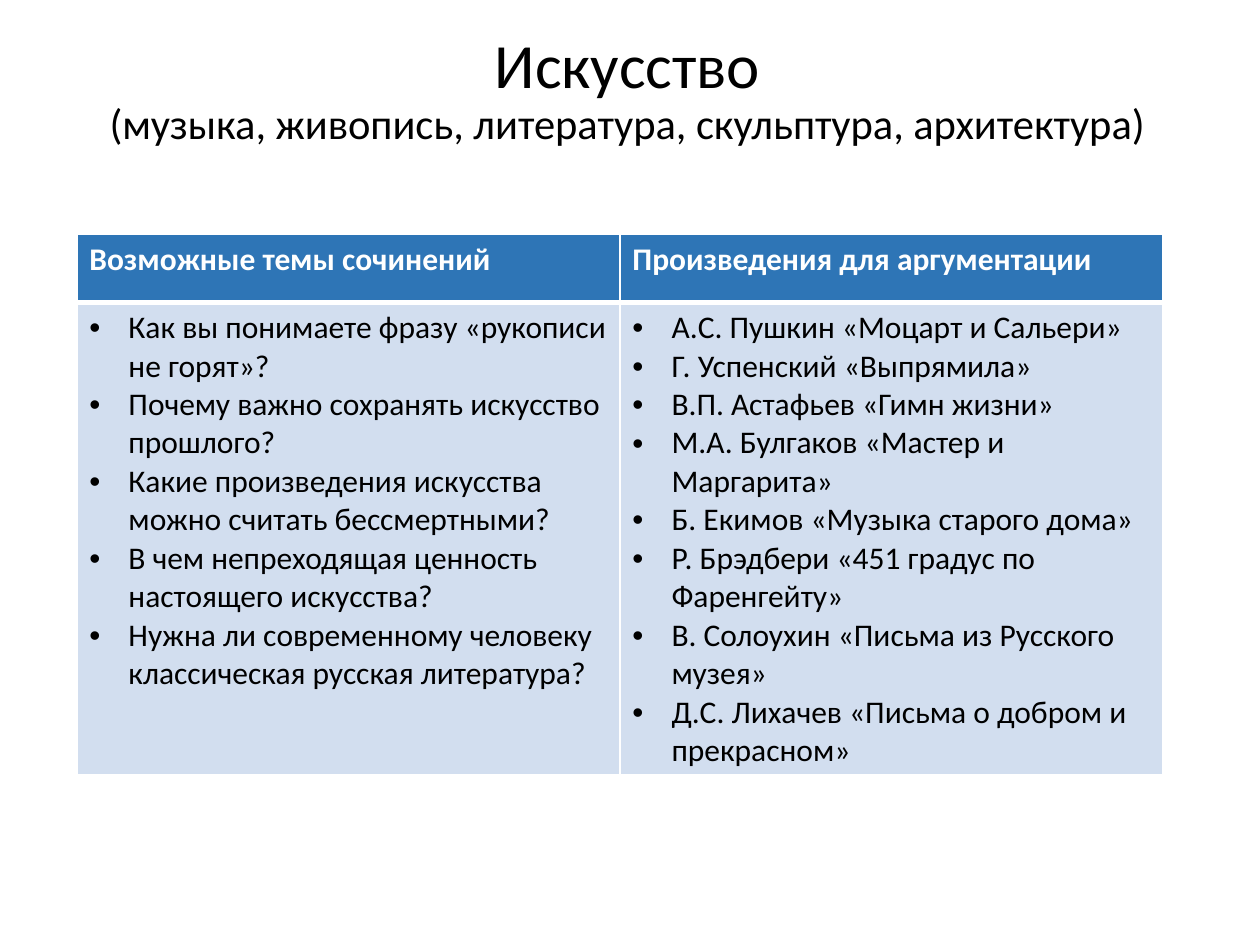
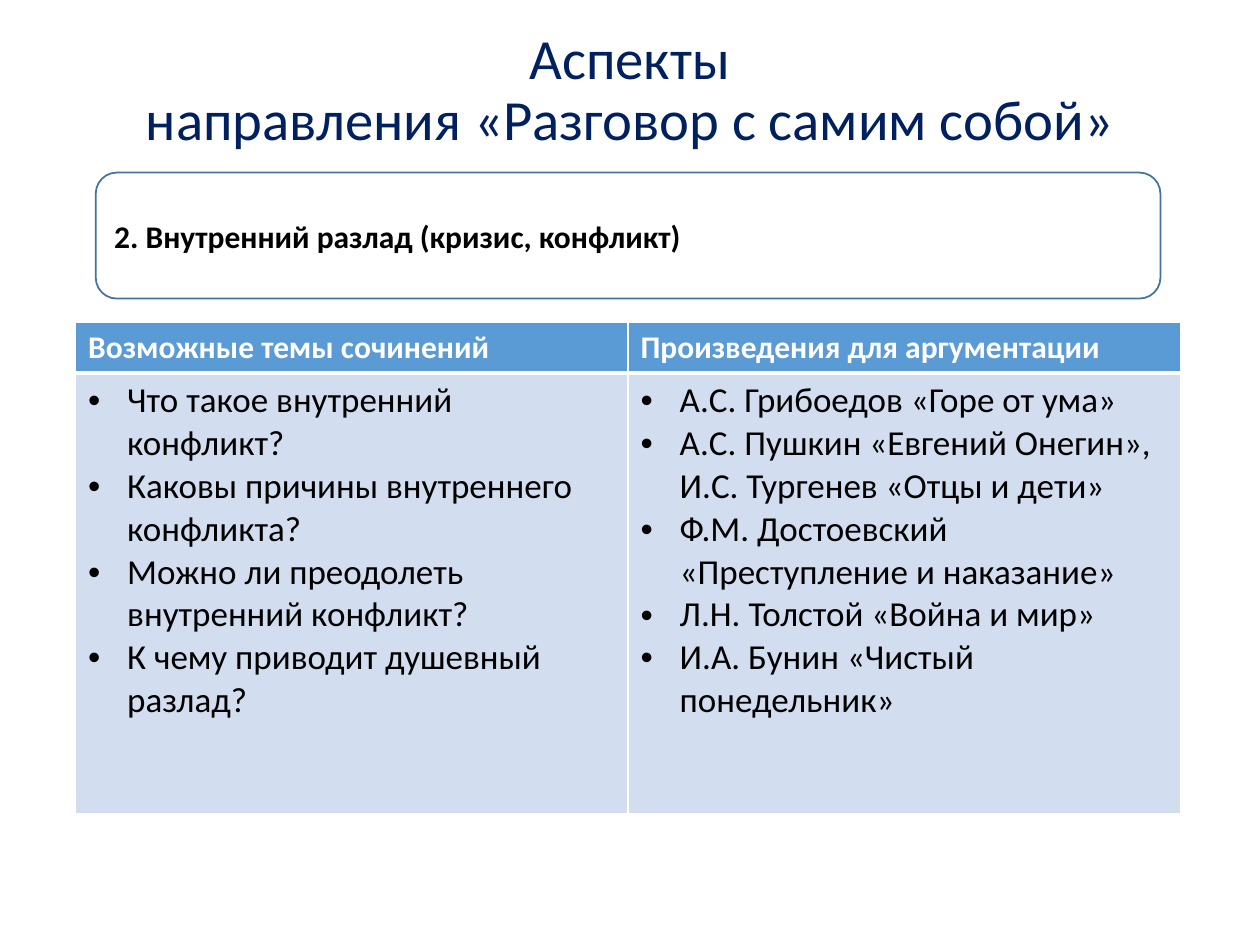
from dataclasses import dataclass

import lxml.etree
import pptx
import pptx.dml.color
import pptx.enum.shapes
import pptx.enum.text
import pptx.oxml.ns
import pptx.slide
import pptx.table
import pptx.text.text
import pptx.util

SLIDE_WIDTH = pptx.util.Inches(10)
SLIDE_HEIGHT = pptx.util.Inches(7.5)
GRID_COLUMNS = 100
GRID_ROWS = 75


@dataclass(frozen=True)
class Theme:
    """Colours and type sizes of the presentation."""

    font: str = "Calibri"
    text: str = "000000"
    light: str = "FFFFFF"
    navy: str = "002060"
    header_dark: str = "2E75B6"
    header_light: str = "5B9BD5"
    body: str = "D2DEEF"
    outline: str = "43739E"
    title_large: float = 36
    title_medium: float = 32.4
    title_small: float = 24.3
    label: float = 18
    large_label: float = 20
    thin_line: float = 1
    thick_line: float = 3
    title_spacing: float = 0.9


THEME = Theme()
HEADINGS = ("Возможные темы сочинений", "Произведения для аргументации")


@dataclass(frozen=True)
class Area:
    """A rectangle in grid columns and rows."""

    column: float
    row: float
    columns: float
    rows: float

    def emu(self) -> tuple[int, int, int, int]:
        """Return left, top, width and height."""
        return across(self.column), down(self.row), across(self.columns), down(self.rows)


@dataclass(frozen=True)
class TitleLine:
    """One line of a slide title."""

    text: str
    size: float


@dataclass(frozen=True)
class Title:
    """A centred slide title."""

    area: Area
    lines: tuple[TitleLine, ...]
    color: str


@dataclass(frozen=True)
class ThemeTable:
    """Essay topics beside the works that support them."""

    area: Area
    header_rows: float
    header_color: str
    size: float
    topics: tuple[str, ...]
    works: tuple[str, ...]


@dataclass(frozen=True)
class Aspect:
    """A rounded box that names the aspect."""

    area: Area
    text: str


@dataclass(frozen=True)
class Page:
    """Everything that one slide shows."""

    title: Title
    table: ThemeTable
    aspect: Aspect | None = None


def across(columns: float) -> int:
    """Convert grid columns to a length."""
    return round(SLIDE_WIDTH * columns / GRID_COLUMNS)


def down(rows: float) -> int:
    """Convert grid rows to a length."""
    return round(SLIDE_HEIGHT * rows / GRID_ROWS)


def rgb(color: str) -> pptx.dml.color.RGBColor:
    """Return a colour from its hexadecimal form."""
    return pptx.dml.color.RGBColor.from_string(color)


def style_font(font: pptx.text.text.Font, size: float, color: str, bold: bool = False) -> None:
    """Set the typeface, size, colour and weight."""
    font.name = THEME.font
    font.size = pptx.util.Pt(size)
    font.color.rgb = rgb(color)
    font.bold = bold


def draw_title(slide: pptx.slide.Slide, title: Title) -> None:
    """Draw the title lines in one centred paragraph."""
    frame = slide.shapes.add_textbox(*title.area.emu()).text_frame
    frame.word_wrap = True
    frame.vertical_anchor = pptx.enum.text.MSO_ANCHOR.MIDDLE
    paragraph = frame.paragraphs[0]
    paragraph.alignment = pptx.enum.text.PP_ALIGN.CENTER
    paragraph.line_spacing = THEME.title_spacing
    for index, line in enumerate(title.lines):
        if index:
            paragraph.add_line_break()
        run = paragraph.add_run()
        run.text = line.text
        style_font(run.font, line.size, title.color)


def add_bullet(paragraph: pptx.text.text._Paragraph) -> None:
    """Give a paragraph a bullet and a hanging indent."""
    indent = across(3.1)
    properties = paragraph._p.get_or_add_pPr()
    properties.set("marL", str(indent))
    properties.set("indent", str(-indent))
    lxml.etree.SubElement(properties, pptx.oxml.ns.qn("a:buFont"), typeface="Arial")
    lxml.etree.SubElement(properties, pptx.oxml.ns.qn("a:buChar"), char="•")


def style_cell(cell: pptx.table._Cell, color: str, is_header: bool) -> None:
    """Set white borders, with a thick rule below the header, and the fill."""
    properties = cell._tc.get_or_add_tcPr()
    thick_side = "lnB" if is_header else "lnT"
    for side in ("lnL", "lnR", "lnT", "lnB"):
        width = THEME.thick_line if side == thick_side else THEME.thin_line
        border = lxml.etree.SubElement(
            properties, pptx.oxml.ns.qn(f"a:{side}"), w=str(pptx.util.Pt(width))
        )
        fill = lxml.etree.SubElement(border, pptx.oxml.ns.qn("a:solidFill"))
        lxml.etree.SubElement(fill, pptx.oxml.ns.qn("a:srgbClr"), val=THEME.light)
    cell.fill.solid()
    cell.fill.fore_color.rgb = rgb(color)


def draw_table(slide: pptx.slide.Slide, content: ThemeTable) -> None:
    """Draw the headings over two bulleted columns."""
    table = slide.shapes.add_table(2, len(HEADINGS), *content.area.emu()).table
    table.first_row = False
    table.horz_banding = False
    table.rows[0].height = down(content.header_rows)
    table.rows[1].height = down(content.area.rows - content.header_rows)
    for index, (heading, items) in enumerate(zip(HEADINGS, (content.topics, content.works))):
        table.columns[index].width = across(content.area.columns / len(HEADINGS))
        header, body = table.cell(0, index), table.cell(1, index)
        style_cell(header, content.header_color, True)
        style_cell(body, THEME.body, False)
        header.text_frame.text = heading
        style_font(header.text_frame.paragraphs[0].font, THEME.label, THEME.light, True)
        body.text_frame.text = "\n".join(items)
        for paragraph in body.text_frame.paragraphs:
            add_bullet(paragraph)
            style_font(paragraph.font, content.size, THEME.text)


def draw_aspect(slide: pptx.slide.Slide, aspect: Aspect) -> None:
    """Draw the outlined box with the aspect name."""
    shape = slide.shapes.add_shape(
        pptx.enum.shapes.MSO_SHAPE.ROUNDED_RECTANGLE, *aspect.area.emu()
    )
    shape.shadow.inherit = False
    shape.fill.solid()
    shape.fill.fore_color.rgb = rgb(THEME.light)
    shape.line.color.rgb = rgb(THEME.outline)
    shape.line.width = pptx.util.Pt(THEME.thin_line)
    frame = shape.text_frame
    frame.word_wrap = True
    frame.vertical_anchor = pptx.enum.text.MSO_ANCHOR.MIDDLE
    paragraph = frame.paragraphs[0]
    paragraph.text = aspect.text
    paragraph.alignment = pptx.enum.text.PP_ALIGN.LEFT
    style_font(paragraph.font, THEME.label, THEME.text, True)


PAGES = (
    Page(
        title=Title(
            Area(3.6, 1.5, 92.4, 11.5),
            (
                TitleLine("Искусство", THEME.title_large),
                TitleLine(
                    "(музыка, живопись, литература, скульптура, архитектура)",
                    THEME.title_small,
                ),
            ),
            THEME.text,
        ),
        table=ThemeTable(
            area=Area(6.1, 18.6, 86.2, 42.9),
            header_rows=5.4,
            header_color=THEME.header_dark,
            size=THEME.label,
            topics=(
                "Как вы понимаете фразу «рукописи не горят»?",
                "Почему важно сохранять искусство прошлого?",
                "Какие произведения искусства можно считать бессмертными?",
                "В чем непреходящая ценность настоящего искусства?",
                "Нужна ли современному человеку классическая русская литература?",
            ),
            works=(
                "А.С. Пушкин «Моцарт и Сальери»",
                "Г. Успенский «Выпрямила»",
                "В.П. Астафьев «Гимн жизни»",
                "М.А. Булгаков «Мастер и Маргарита»",
                "Б. Екимов «Музыка старого дома»",
                "Р. Брэдбери «451 градус по Фаренгейту»",
                "В. Солоухин «Письма из Русского музея»",
                "Д.С. Лихачев «Письма о добром и прекрасном»",
            ),
        ),
    ),
    Page(
        title=Title(
            Area(6.9, 1.5, 86.2, 11.5),
            (
                TitleLine("Аспекты", THEME.title_medium),
                TitleLine("направления «Разговор с самим собой»", THEME.title_medium),
            ),
            THEME.navy,
        ),
        table=ThemeTable(
            area=Area(6, 25.6, 87.7, 39),
            header_rows=4,
            header_color=THEME.header_light,
            size=THEME.large_label,
            topics=(
                "Что такое внутренний конфликт?",
                "Каковы причины внутреннего конфликта?",
                "Можно ли преодолеть внутренний конфликт?",
                "К чему приводит душевный разлад?",
            ),
            works=(
                "А.С. Грибоедов «Горе от ума»",
                "А.С. Пушкин «Евгений Онегин», И.С. Тургенев «Отцы и дети»",
                "Ф.М. Достоевский «Преступление и наказание»",
                "Л.Н. Толстой «Война и мир»",
                "И.А. Бунин «Чистый понедельник»",
            ),
        ),
        aspect=Aspect(Area(7.6, 13.7, 84.5, 10), "2. Внутренний разлад (кризис, конфликт)"),
    ),
)


def main() -> None:
    """Build the presentation and save it."""
    presentation = pptx.Presentation()
    presentation.slide_width = SLIDE_WIDTH
    presentation.slide_height = SLIDE_HEIGHT
    for page in PAGES:
        slide = presentation.slides.add_slide(presentation.slide_layouts[6])
        draw_title(slide, page.title)
        draw_table(slide, page.table)
        if page.aspect:
            draw_aspect(slide, page.aspect)
    presentation.save("out.pptx")


if __name__ == "__main__":
    main()
